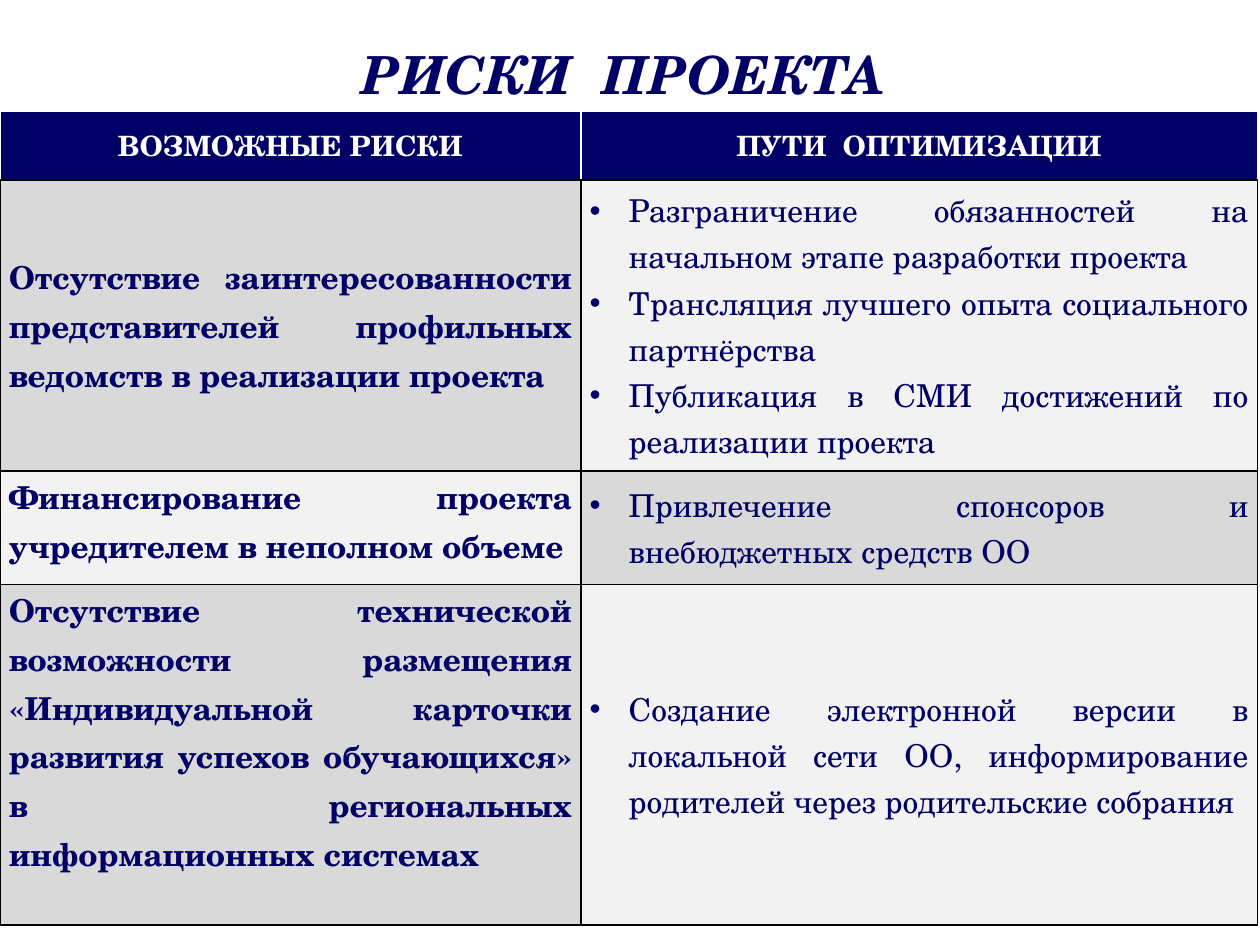
from dataclasses import dataclass

from lxml.etree import SubElement
from pptx import Presentation
from pptx.dml.color import RGBColor
from pptx.enum.text import MSO_ANCHOR, PP_ALIGN
from pptx.oxml import parse_xml
from pptx.oxml.ns import nsdecls, qn
from pptx.util import Inches, Pt

FONT = "TeX Gyre Schola"
COLORS = {
    "navy": "000066",
    "white": "FFFFFF",
    "black": "000000",
    "gray": "D9D9D9",
    "pale": "F2F2F2",
    "outline": "C00000",
}
COLUMN_WIDTHS = (4.61, 5.37)
HEADER_HEIGHT = 0.55
HEADINGS = ("ВОЗМОЖНЫЕ РИСКИ", "ПУТИ  ОПТИМИЗАЦИИ")
BULLET_INDENT = 0.31


@dataclass
class RiskRow:
    height: float
    risk: str
    remedies: tuple[str, ...]
    space_below: float = 0  # gap under the risk text, inches


RISKS = (
    RiskRow(
        2.31,
        "Отсутствие заинтересованности представителей профильных ведомств в реализации проекта",
        (
            "Разграничение обязанностей на начальном этапе разработки проекта",
            "Трансляция лучшего опыта социального партнёрства",
            "Публикация в СМИ достижений по реализации проекта",
        ),
    ),
    RiskRow(
        0.9,
        "Финансирование проекта учредителем в неполном объеме",
        ("Привлечение спонсоров и внебюджетных средств ОО",),
        space_below=0.1,
    ),
    RiskRow(
        2.7,
        "Отсутствие технической возможности размещения «Индивидуальной карточки "
        "развития успехов обучающихся» в региональных информационных системах",
        (
            "Создание электронной версии в локальной сети ОО, "
            "информирование родителей через родительские собрания",
        ),
        space_below=0.36,
    ),
)


def format_paragraph(para, size: float, color: str, align, bold: bool = True) -> None:
    para.alignment = align
    for span in para.runs:
        span.font.name = FONT
        span.font.size = Pt(size)
        span.font.bold = bold
        span.font.color.rgb = RGBColor.from_string(COLORS[color])


def add_bullet(para) -> None:
    properties = para._p.get_or_add_pPr()
    properties.set("marL", str(Inches(BULLET_INDENT)))
    properties.set("indent", str(-Inches(BULLET_INDENT)))
    SubElement(properties, qn("a:buFont"), typeface="Arial")
    SubElement(properties, qn("a:buChar"), char="•")


def style_cell(cell, fill: str, sides: str, space_below: float = 0) -> None:
    """Fill the cell and draw its borders; sides colours left, right and top."""
    cell.vertical_anchor = MSO_ANCHOR.MIDDLE
    cell.margin_left = cell.margin_right = Inches(0.07)
    cell.margin_top = 0
    cell.margin_bottom = Inches(space_below)
    cell.fill.solid()
    cell.fill.fore_color.rgb = RGBColor.from_string(COLORS[fill])
    properties = cell._tc.get_or_add_tcPr()
    edges = {"lnL": sides, "lnR": sides, "lnT": sides, "lnB": "black"}
    for position, (edge, color) in enumerate(edges.items()):
        properties.insert(position, parse_xml(
            f'<a:{edge} {nsdecls("a")} w="{Pt(1)}"><a:solidFill>'
            f'<a:srgbClr val="{COLORS[color]}"/></a:solidFill></a:{edge}>'))


def add_title(slide) -> None:
    title = slide.shapes.title
    title.left, title.top = Inches(0.96), Inches(0.28)
    title.width, title.height = Inches(7.97), Inches(0.61)
    title.text_frame.text = "РИСКИ  ПРОЕКТА"
    title.text_frame.vertical_anchor = MSO_ANCHOR.MIDDLE
    para = title.text_frame.paragraphs[0]
    format_paragraph(para, 30, "navy", PP_ALIGN.CENTER)
    span = para.runs[0]
    span.font.italic = True
    span._r.get_or_add_rPr().insert(0, parse_xml(
        f'<a:ln {nsdecls("a")} w="{Pt(1.75)}"><a:solidFill>'
        f'<a:srgbClr val="{COLORS["outline"]}"/></a:solidFill></a:ln>'))


def add_risk_table(slide) -> None:
    heights = (HEADER_HEIGHT, *(row.height for row in RISKS))
    table = slide.shapes.add_table(
        len(heights), len(COLUMN_WIDTHS), 0, Inches(0.88),
        Inches(sum(COLUMN_WIDTHS)), Inches(sum(heights))).table
    for column, width in zip(table.columns, COLUMN_WIDTHS):
        column.width = Inches(width)
    for row, height in zip(table.rows, heights):
        row.height = Inches(height)

    # Header row
    for column, heading in enumerate(HEADINGS):
        cell = table.cell(0, column)
        cell.text_frame.text = heading
        style_cell(cell, "navy", "white")
        format_paragraph(cell.text_frame.paragraphs[0], 16, "white", PP_ALIGN.CENTER)

    # Risks on the left, remedies on the right, in checkered shades
    shades = ("gray", "pale")
    for index, row in enumerate(RISKS):
        risk, remedy = table.cell(index + 1, 0), table.cell(index + 1, 1)
        risk.text_frame.text = row.risk
        remedy.text_frame.text = "\n".join(row.remedies)
        style_cell(risk, shades[index % 2], "black", row.space_below)
        style_cell(remedy, shades[(index + 1) % 2], "black")
        format_paragraph(risk.text_frame.paragraphs[0], 18, "navy", PP_ALIGN.JUSTIFY)
        for para in remedy.text_frame.paragraphs:
            add_bullet(para)
            format_paragraph(para, 18, "navy", PP_ALIGN.JUSTIFY, bold=False)


def main() -> None:
    deck = Presentation()
    deck.slide_width, deck.slide_height = Inches(10), Inches(7.5)
    slide = deck.slides.add_slide(deck.slide_layouts[5])
    add_title(slide)
    add_risk_table(slide)
    deck.save("out.pptx")


if __name__ == "__main__":
    main()
